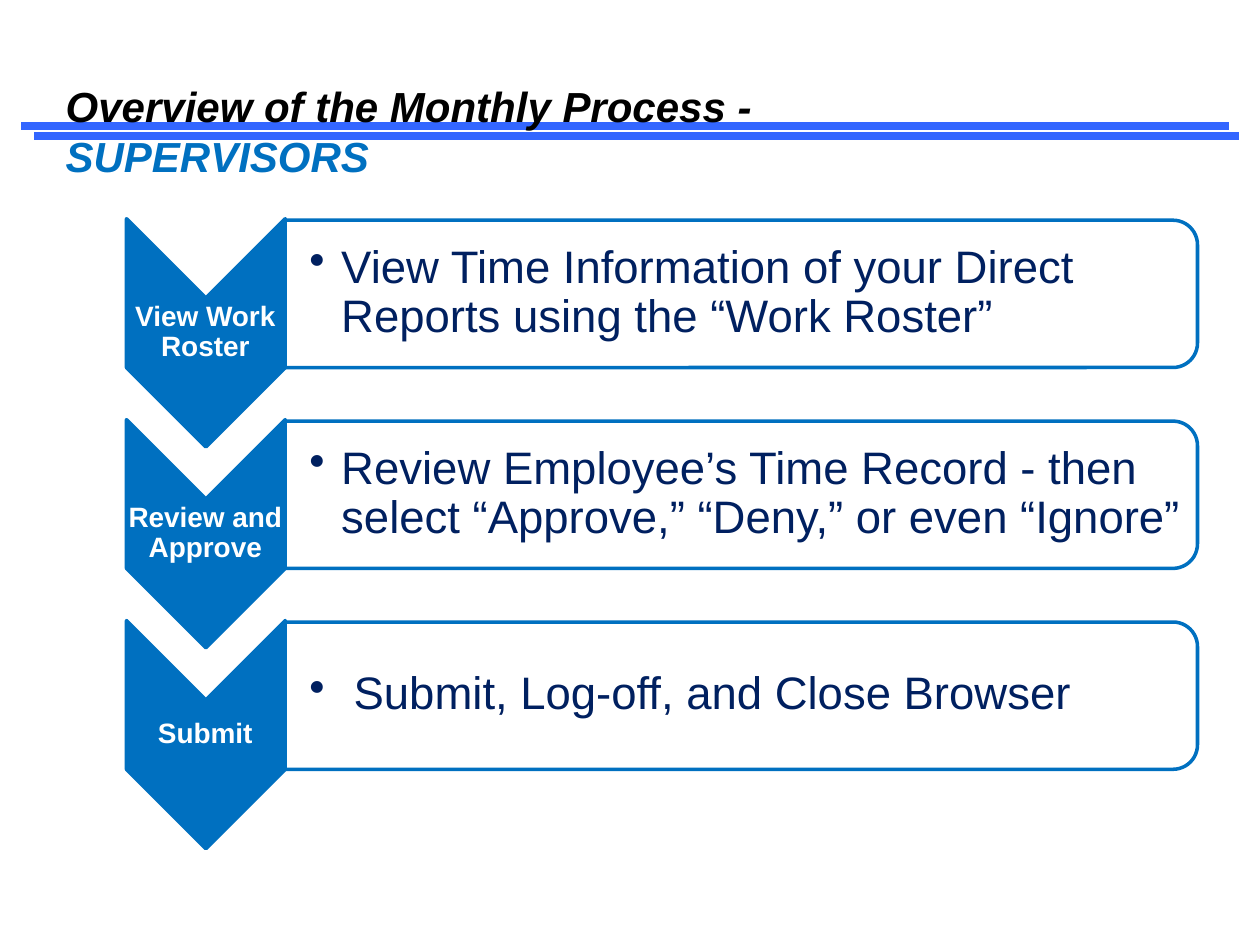
"""Build the supervisors' monthly process overview slide."""
import pptx
import pptx.dml.color
import pptx.enum.shapes
import pptx.enum.text
import pptx.oxml
import pptx.oxml.ns
import pptx.util
from dataclasses import dataclass
from lxml import etree

Cm, Pt = pptx.util.Cm, pptx.util.Pt
RGB = pptx.dml.color.RGBColor.from_string
SHAPE = pptx.enum.shapes.MSO_SHAPE
ALIGN = pptx.enum.text.PP_ALIGN
qn = pptx.oxml.ns.qn


@dataclass
class Theme:
    font: str = "Arial"
    rule: str = "3366FF"
    accent: str = "0070C0"
    title: str = "000000"
    body: str = "002060"
    white: str = "FFFFFF"
    title_size: int = 24
    label_size: int = 16
    body_size: int = 26


theme = Theme()


def add_step_shape(kind, left, top, width, height, fill):
    shape = page.shapes.add_shape(kind, Cm(left), Cm(top), Cm(width), Cm(height))
    shape.rotation = 90
    shape.shadow.inherit = False
    shape.fill.solid()
    shape.fill.fore_color.rgb = RGB(fill)
    shape.line.color.rgb = RGB(theme.accent)
    shape.line.width = Pt(2)
    return shape


def add_step_text(text, left, top, width, height, insets, size, color):
    box = page.shapes.add_textbox(Cm(left), Cm(top), Cm(width), Cm(height))
    frame = box.text_frame
    frame.word_wrap = True
    frame.vertical_anchor = pptx.enum.text.MSO_ANCHOR.MIDDLE
    frame.margin_left = Cm(insets[0])
    frame.margin_top = frame.margin_right = frame.margin_bottom = Cm(insets[1])
    para = frame.paragraphs[0]
    para.text = text
    para.line_spacing = 0.9
    para.font.name = theme.font
    para.font.size = Pt(size)
    para.font.color.rgb = RGB(color)
    return para


deck = pptx.Presentation()
deck.slide_width, deck.slide_height = Cm(25.4), Cm(19.05)
page = deck.slides.add_slide(deck.slide_layouts[5])

for start, end, y in [(0.43, 24.77, 2.54), (0.69, 24.97, 2.74)]:
    rule = page.shapes.add_connector(
        pptx.enum.shapes.MSO_CONNECTOR.STRAIGHT, Cm(start), Cm(y), Cm(end), Cm(y))
    rule.line.color.rgb = RGB(theme.rule)
    rule.line.width = Pt(4.25)
    etree.SubElement(rule.element.spPr, qn("a:effectLst"))

title = page.shapes.title
title.element.getparent().append(title.element)
title.left, title.top, title.width, title.height = Cm(1.07), Cm(1.45), Cm(23.7), Cm(2.36)
title.text_frame.auto_size = pptx.enum.text.MSO_AUTO_SIZE.NONE
title.text_frame.vertical_anchor = pptx.enum.text.MSO_ANCHOR.MIDDLE
para = title.text_frame.paragraphs[0]
para.alignment = ALIGN.LEFT
para.line_spacing = Pt(29)
para.font.name = theme.font
para.font.size = Pt(theme.title_size)
para.font.bold = para.font.italic = True
span = para.add_run()
span.text = "Overview of the Monthly Process -"
span.font.color.rgb = RGB(theme.title)
para.add_line_break()
span = para.add_run()
span.text = "SUPERVISORS"
span.font.color.rgb = RGB(theme.accent)

steps = [
    ("View Work Roster",
     "View Time Information of your Direct Reports using the “Work Roster”", 0.64),
    ("Review and Approve",
     "Review Employee’s Time Record - then select “Approve,” “Deny,” or even “Ignore”", 0.64),
    ("Submit", "Submit, Log-off, and Close Browser", 0.89),
]
step_pitch = 4.05

for index, (label, detail, indent) in enumerate(steps):
    offset = index * step_pitch
    add_step_shape(SHAPE.CHEVRON, 1.85, 5.11 + offset, 4.6, 3.2, theme.accent)
    para = add_step_text(label, 2.54, 6.02 + offset, 3.2, 1.37, (0.03, 0.03),
                         theme.label_size, theme.white)
    para.alignment = ALIGN.CENTER
    para.font.bold = True

    card = add_step_shape(SHAPE.ROUND_2_SAME_RECTANGLE, 13.46, -3.27 + offset,
                          2.97, 18.39, theme.white)
    fill_color = card.element.spPr.find(qn("a:solidFill"))[0]
    etree.SubElement(fill_color, qn("a:alpha"), val="90000")
    para = add_step_text(detail, 5.74, 4.57 + offset, 18.24, 2.69, (0.5, 0.05),
                         theme.body_size, theme.body)
    props = para._p.get_or_add_pPr()
    props.set("marL", str(Cm(indent)))
    props.set("indent", str(-Cm(indent)))
    bullet = pptx.oxml.parse_xml(
        f'<a:buChar {pptx.oxml.ns.nsdecls("a")} char="•"/>')
    props.find(qn("a:lnSpc")).addnext(bullet)

deck.save("out.pptx")
